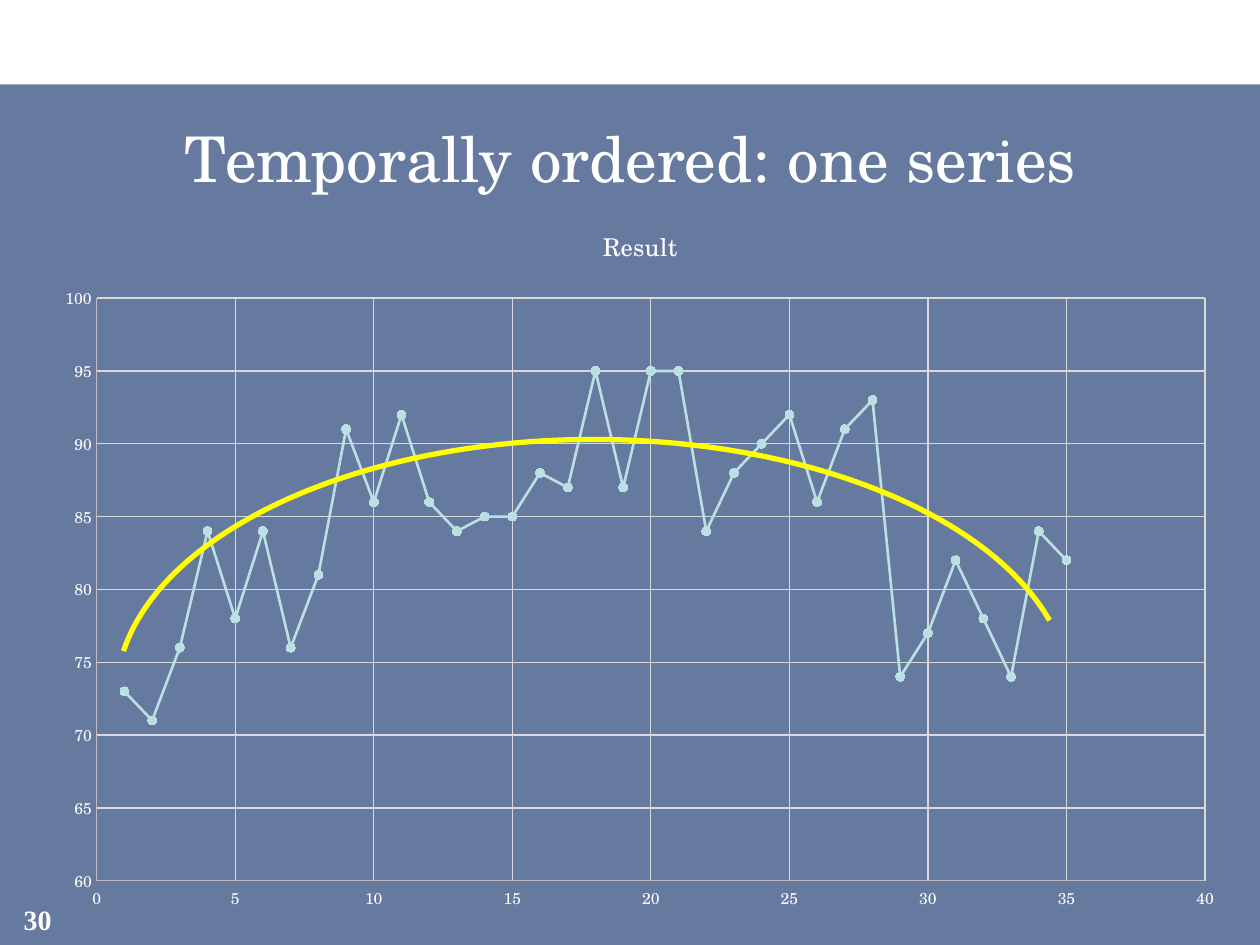
"""Build a slide with one time series as a scatter chart and a trend arc."""
from lxml.etree import SubElement
from pptx import Presentation
from pptx.chart.data import XyChartData
from pptx.dml.color import RGBColor
from pptx.enum.chart import XL_CHART_TYPE as ChartType
from pptx.enum.chart import XL_MARKER_STYLE as Marker
from pptx.enum.chart import XL_TICK_MARK as Tick
from pptx.enum.shapes import MSO_SHAPE as Shape
from pptx.enum.text import MSO_ANCHOR as Anchor
from pptx.enum.text import PP_ALIGN as Align
from pptx.oxml import parse_xml
from pptx.oxml.ns import nsdecls, qn
from pptx.util import Cm, Pt

NAVY = RGBColor(0x00, 0x20, 0x60)
WHITE = RGBColor(0xFF, 0xFF, 0xFF)
PALE_TEAL = RGBColor(0xBB, 0xE0, 0xE3)
YELLOW = RGBColor(0xFF, 0xFF, 0x00)
AXIS_GREY = RGBColor(0xBF, 0xBF, 0xBF)
GRID_GREY = RGBColor(0xD9, 0xD9, 0xD9)
SERIF = "TeX Gyre Schola"

TITLE = "Temporally ordered: one series"
PAGE_NUMBER = "30"
SERIES = "Result"
RESULTS = [73, 71, 76, 84, 78, 84, 76, 81, 91, 86, 92, 86,
           84, 85, 85, 88, 87, 95, 87, 95, 95, 84, 88, 90,
           92, 86, 91, 93, 74, 77, 82, 78, 74, 84, 82]
HORIZONTAL_SCALE = (0, 40, 5)
VERTICAL_SCALE = (60, 100, 5)

PANEL_BOX = (0, 1.7, 25.4, 17.35)
TITLE_BOX = (0.64, 2.11, 24.13, 2.11)
NUMBER_BOX = (0, 18.03, 1.52, 1.02)
CHART_BOX = (0.84, 4.01, 24.13, 14.61)
TREND_BOX = (2.34, 8.86, 19.25, 10.36)
TREND_ANGLES = (111.3, 210.32)


def place(box):
    return [Cm(length) for length in box]


def style_font(font, size, name=SERIF, bold=False):
    font.size = Pt(size)
    font.name = name
    font.bold = bold
    font.color.rgb = WHITE


def add_text(slide, text, box, **style):
    frame = slide.shapes.add_textbox(*place(box)).text_frame
    frame.word_wrap = True
    frame.vertical_anchor = Anchor.MIDDLE
    frame.margin_left = frame.margin_right = 0
    frame.margin_top = frame.margin_bottom = 0
    paragraph = frame.paragraphs[0]
    paragraph.alignment = Align.CENTER
    run = paragraph.add_run()
    run.text = text
    style_font(run.font, **style)


def add_panel(slide):
    panel = slide.shapes.add_shape(Shape.RECTANGLE, *place(PANEL_BOX))
    panel.shadow.inherit = False
    panel.line.fill.background()
    panel.fill.solid()
    panel.fill.fore_color.rgb = NAVY
    tint = next(panel.fill._xPr.iter(qn("a:srgbClr")))
    SubElement(tint, qn("a:alpha"), val="60000")


def style_line(line, color, width):
    line.color.rgb = color
    line.width = Pt(width)


def style_axis(axis, scale):
    axis.minimum_scale, axis.maximum_scale, axis.major_unit = scale
    axis.major_tick_mark = axis.minor_tick_mark = Tick.NONE
    axis.has_major_gridlines = True
    style_line(axis.major_gridlines.format.line, GRID_GREY, 0.75)
    style_line(axis.format.line, AXIS_GREY, 0.75)
    style_font(axis.tick_labels.font, 9)


def set_plot_area(chart, **fractions):
    plot_area = chart._chartSpace.chart.plotArea
    for layout in plot_area.findall(qn("c:layout")):
        plot_area.remove(layout)
    settings = {"layoutTarget": "inner", "xMode": "edge", "yMode": "edge", **fractions}
    parts = "".join(f'<c:{key} val="{value}"/>' for key, value in settings.items())
    plot_area.insert(0, parse_xml(
        f'<c:layout {nsdecls("c")}><c:manualLayout>{parts}</c:manualLayout></c:layout>'))


def add_result_chart(slide):
    data = XyChartData()
    points = data.add_series(SERIES)
    for order, result in enumerate(RESULTS, start=1):
        points.add_data_point(order, result)
    chart = slide.shapes.add_chart(
        ChartType.XY_SCATTER_LINES, *place(CHART_BOX), data).chart
    style_font(chart.font, 10)
    chart.has_legend = False
    chart.has_title = True
    heading = chart.chart_title.text_frame.paragraphs[0].add_run()
    heading.text = SERIES
    style_font(heading.font, 14)
    style_axis(chart.category_axis, HORIZONTAL_SCALE)
    style_axis(chart.value_axis, VERTICAL_SCALE)
    set_plot_area(chart, x=0.046, y=0.137, w=0.926, h=0.804)

    chart.plots[0].vary_by_categories = False
    series = chart.plots[0].series[0]
    series.smooth = False
    style_line(series.format.line, PALE_TEAL, 1.5)
    series.marker.style = Marker.CIRCLE
    series.marker.size = 5
    series.marker.format.fill.solid()
    series.marker.format.fill.fore_color.rgb = PALE_TEAL
    style_line(series.marker.format.line, PALE_TEAL, 0.75)


def add_trend(slide):
    trend = slide.shapes.add_shape(Shape.ARC, *place(TREND_BOX))
    trend.shadow.inherit = False
    trend.fill.background()
    style_line(trend.line, YELLOW, 3)
    for index, angle in enumerate(TREND_ANGLES):
        trend.adjustments[index] = angle


def main():
    deck = Presentation()
    deck.slide_width, deck.slide_height = Cm(25.4), Cm(19.05)
    slide = deck.slides.add_slide(deck.slide_layouts[6])
    add_panel(slide)
    add_text(slide, PAGE_NUMBER, NUMBER_BOX, size=16, name="Times New Roman", bold=True)
    add_text(slide, TITLE, TITLE_BOX, size=36)
    add_result_chart(slide)
    add_trend(slide)
    deck.save("out.pptx")


if __name__ == "__main__":
    main()
